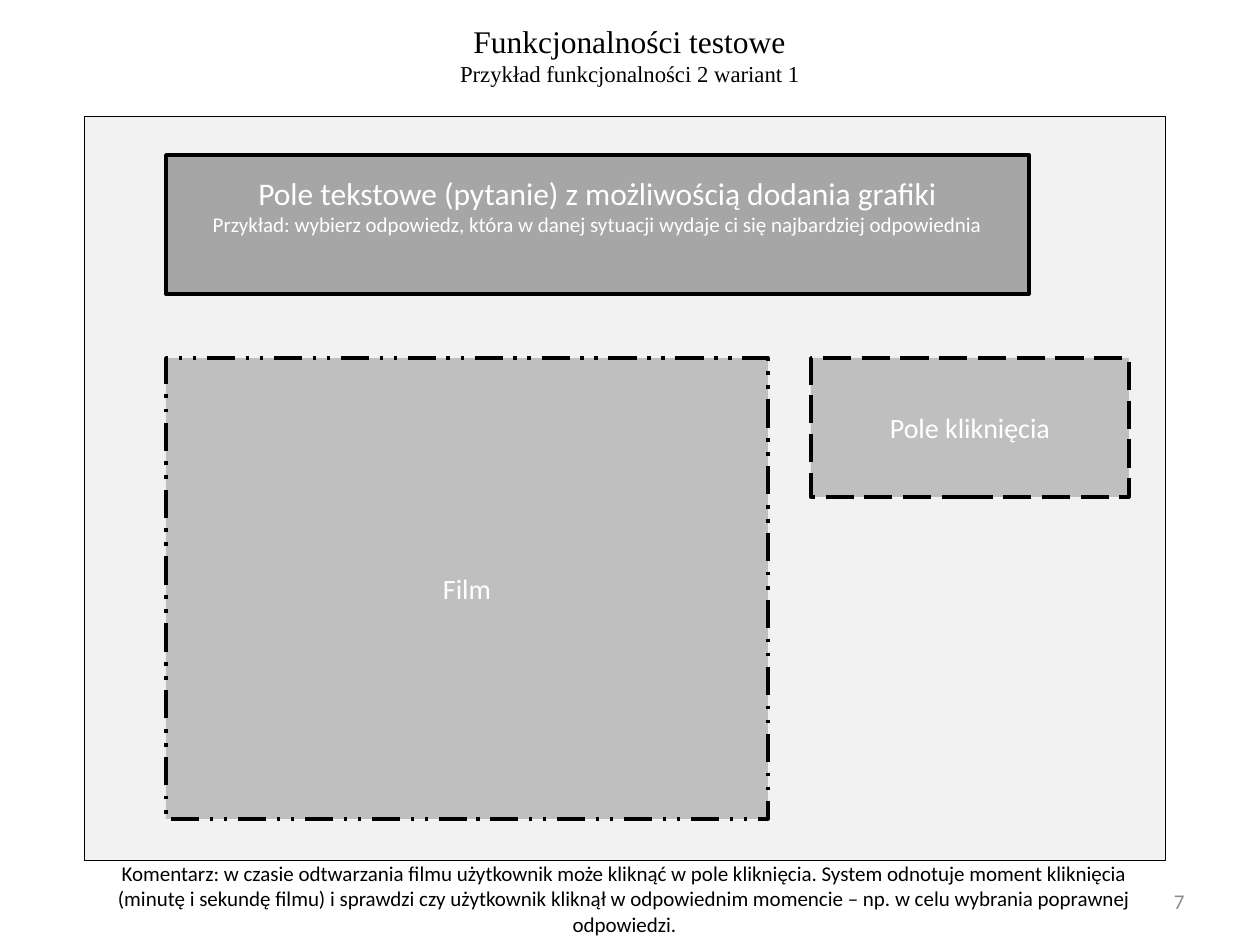
import pptx
import pptx.util
import pptx.dml.color
import pptx.enum.dml
import pptx.enum.shapes
import pptx.enum.text

PX = 914400 / 126
COLORS = {
    "panel": "F2F2F2",
    "question": "A6A6A6",
    "field": "BFBFBF",
    "ink": "000000",
    "light": "FFFFFF",
    "number": "8C8C8C",
}
ALIGN = pptx.enum.text.PP_ALIGN
ANCHOR = pptx.enum.text.MSO_ANCHOR
DASH = pptx.enum.dml.MSO_LINE


def px(value):
    return pptx.util.Emu(round(value * PX))


def color(name):
    return pptx.dml.color.RGBColor.from_string(COLORS[name])


def write(shape, lines, ink, font="Calibri", align=ALIGN.CENTER, anchor=ANCHOR.MIDDLE, wrap=True):
    frame = shape.text_frame
    frame.word_wrap = wrap
    frame.vertical_anchor = anchor
    frame.text = "\n".join(text for text, size in lines)
    for paragraph, (text, size) in zip(frame.paragraphs, lines):
        paragraph.alignment = align
        paragraph.font.name = font
        paragraph.font.size = pptx.util.Pt(size)
        paragraph.font.color.rgb = color(ink)


def add_text(slide, box, lines, ink, **style):
    shape = slide.shapes.add_textbox(*map(px, box))
    write(shape, lines, ink, **style)
    return shape


def add_box(slide, box, fill, line_width, dash=None, lines=()):
    shape = slide.shapes.add_shape(pptx.enum.shapes.MSO_SHAPE.RECTANGLE, *map(px, box))
    shape.shadow.inherit = False
    shape.fill.solid()
    shape.fill.fore_color.rgb = color(fill)
    shape.line.color.rgb = color("ink")
    shape.line.width = pptx.util.Pt(line_width)
    if dash:
        shape.line.dash_style = dash
    if lines:
        write(shape, lines, "light")
    return shape


def add_title(slide, box):
    shape = add_text(
        slide, box,
        [("Funkcjonalności testowe", 18), ("Przykład funkcjonalności 2 wariant 1", 13)],
        "ink", font="Times New Roman", anchor=ANCHOR.TOP, wrap=False,
    )
    shape.text_frame.auto_size = pptx.enum.text.MSO_AUTO_SIZE.SHAPE_TO_FIT_TEXT


def add_screen(slide, box):
    left, top, width, height = box
    margin, field_height = 82, 139
    fields_top = top + 242
    add_box(slide, box, "panel", 0.25)
    question = add_box(
        slide, (left + margin, top + 39, 863, field_height), "question", 2,
        lines=[
            ("Pole tekstowe (pytanie) z możliwością dodania grafiki", 18),
            ("Przykład: wybierz odpowiedz, która w danej sytuacji wydaje ci się najbardziej odpowiednia", 12),
        ],
    )
    question.text_frame.margin_bottom = px(44)
    add_box(slide, (left + 727, fields_top, 318, field_height), "field", 2,
            DASH.LONG_DASH, [("Pole kliknięcia", 16)])
    film = add_box(slide, (left + margin, fields_top, 602, 461), "field", 2,
                   DASH.LONG_DASH_DOT, [("Film", 16)])
    film.line._get_or_add_ln().prstDash.set("val", "lgDashDotDot")


def add_footer(slide, box):
    left, top, width, height = box
    comment = (
        "Komentarz: w czasie odtwarzania filmu użytkownik może kliknąć w pole kliknięcia. "
        "System odnotuje moment kliknięcia (minutę i sekundę filmu) i sprawdzi czy użytkownik "
        "kliknął w odpowiednim momencie – np. w celu wybrania poprawnej odpowiedzi."
    )
    add_text(slide, box, [(comment, 12)], "ink")
    add_text(slide, (left + 819, top + 7, 294, 50), [("7", 12)], "number", align=ALIGN.RIGHT)


def main():
    presentation = pptx.Presentation()
    presentation.slide_width = px(1260)
    presentation.slide_height = px(945)
    slide = presentation.slides.add_slide(presentation.slide_layouts[6])
    add_title(slide, (445, 16, 369, 78))
    add_screen(slide, (84, 116, 1081, 744))
    add_footer(slide, (84, 869, 1081, 59))
    presentation.save("out.pptx")


if __name__ == "__main__":
    main()
